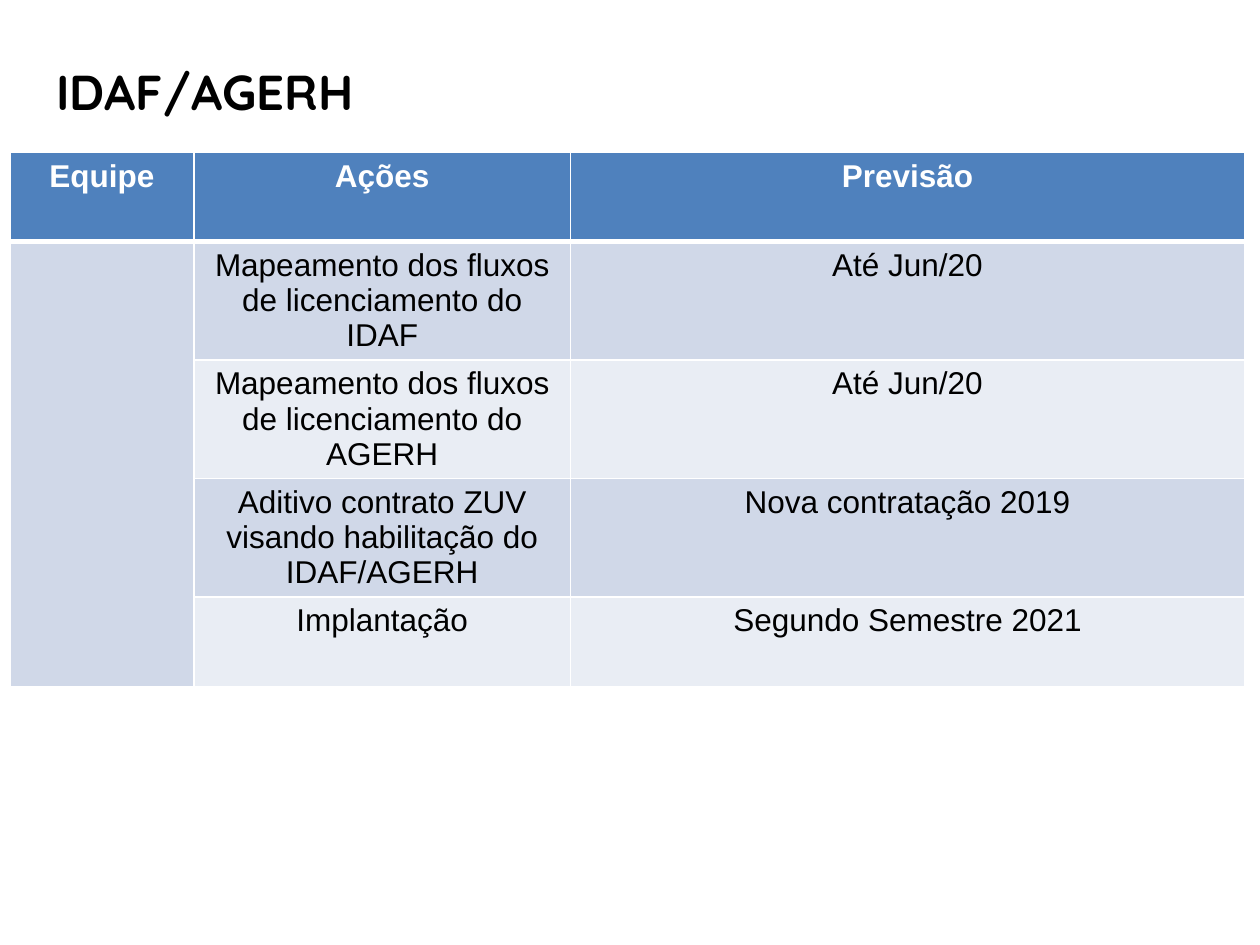
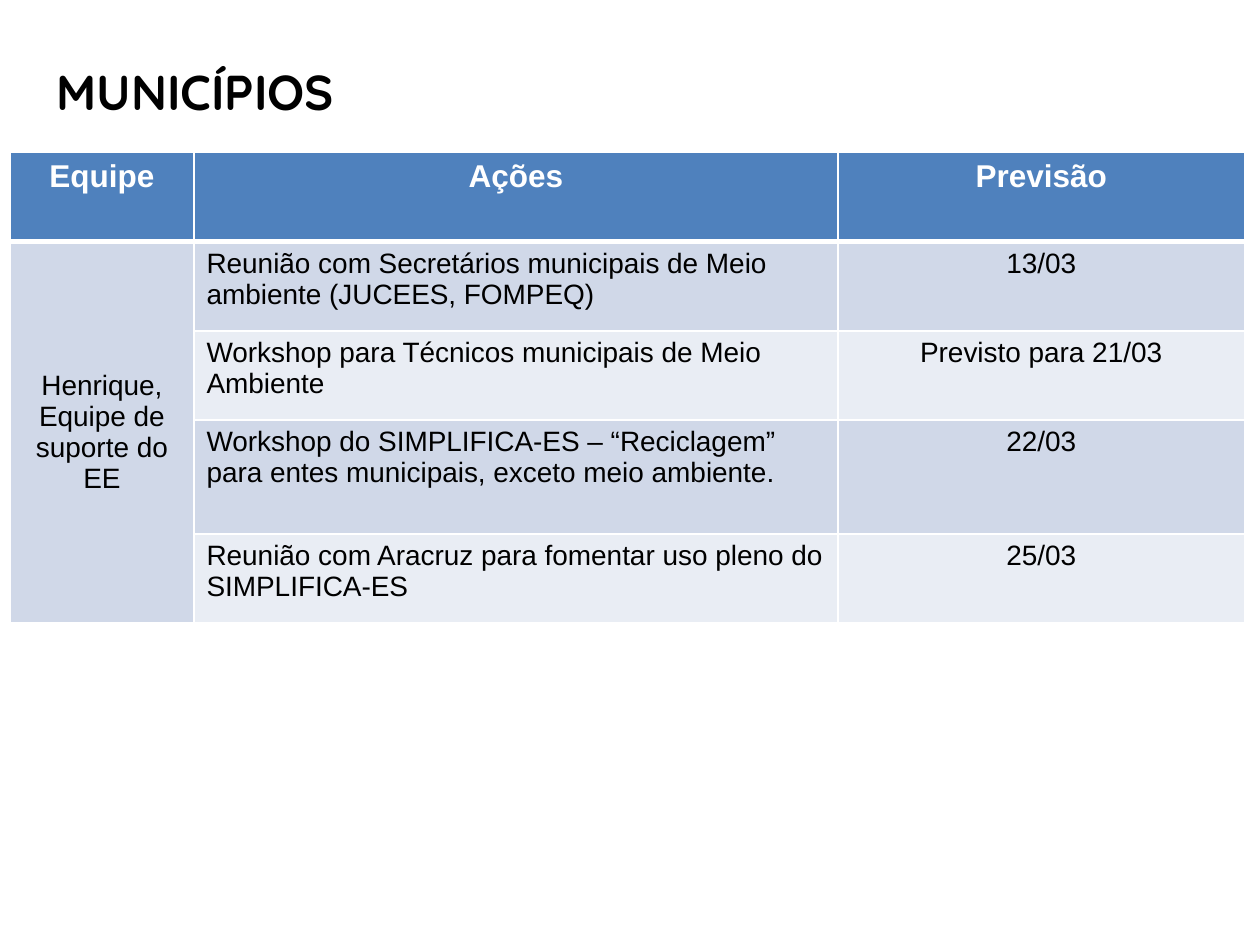
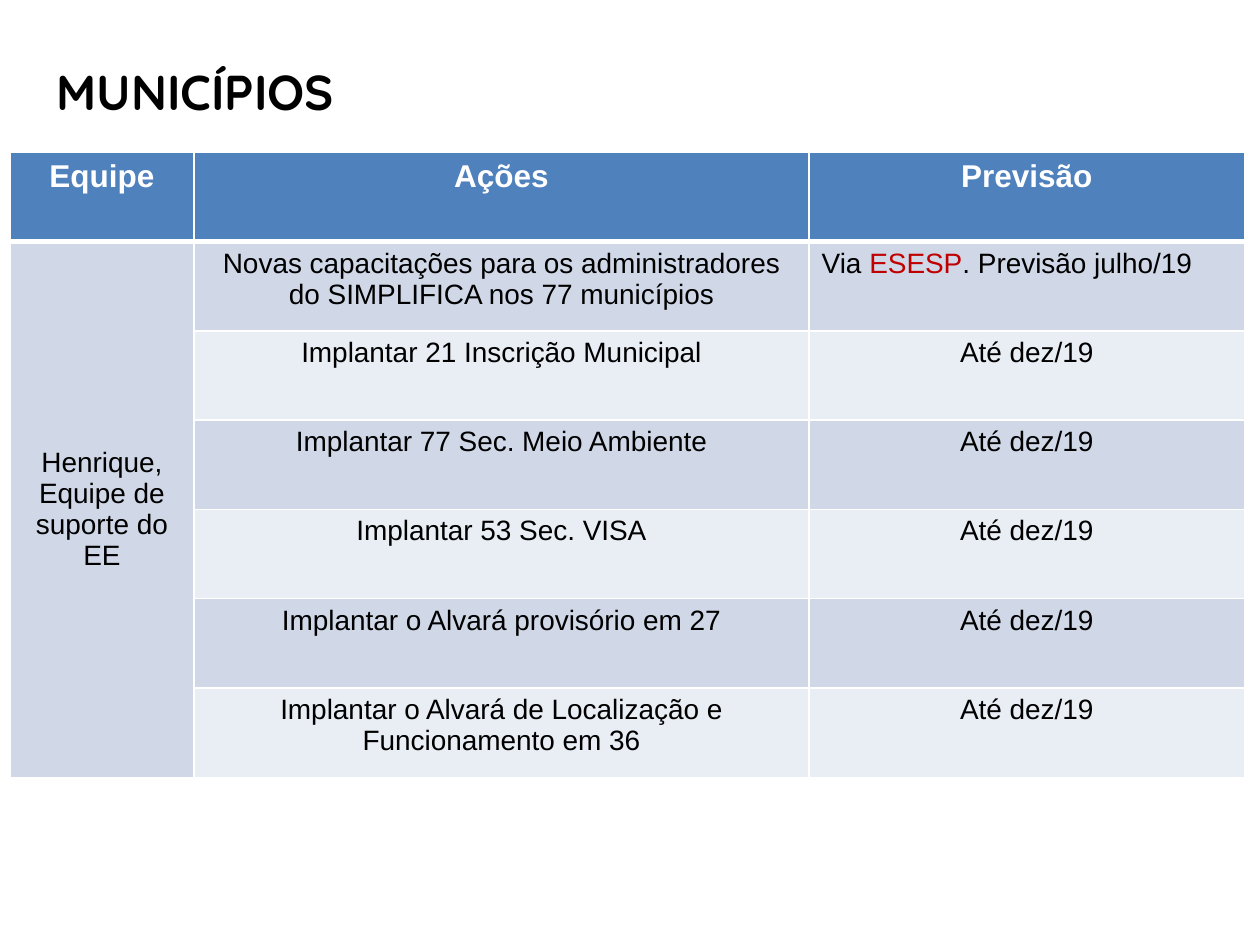
from dataclasses import dataclass

from lxml.etree import SubElement
from pptx import Presentation
from pptx.dml.color import RGBColor
from pptx.enum.text import MSO_ANCHOR as Anchor, PP_ALIGN as Align
from pptx.oxml.ns import qn
from pptx.util import Cm, Pt

# Shared look
BLACK, WHITE, RED = "000000", "FFFFFF", "C00000"
HEADER_BLUE = "4F81BD"
BANDS = ("D0D8E8", "E9EDF4")
HEADINGS = ("Equipe", "Ações", "Previsão")
TABLE_LEFT, TABLE_TOP, TABLE_WIDTH = 0.2, 3.07, 24.89
TEAM_WIDTH, ROW_HEIGHT, TALL_ROW_HEIGHT = 3.71, 1.8, 2.29
HEADING_SIZE = 18
THIN, THICK = 1, 3


@dataclass(frozen=True)
class Step:
    action: str
    forecast: str
    highlight: str = ""
    height: float = ROW_HEIGHT


@dataclass(frozen=True)
class Plan:
    title: str
    team: tuple[str, ...]
    steps: tuple[Step, ...]
    action_width: float
    size: int = 16
    action_align: Align = Align.CENTER


SUPPORT_TEAM = ("Henrique,", "Equipe de suporte do EE")

PLANS = (
    Plan("IDAF/AGERH", (), (
        Step("Mapeamento dos fluxos de licenciamento do IDAF", "Até Jun/20"),
        Step("Mapeamento dos fluxos de licenciamento do AGERH", "Até Jun/20"),
        Step("Aditivo contrato ZUV visando habilitação do IDAF/AGERH",
             "Nova contratação 2019"),
        Step("Implantação", "Segundo Semestre 2021"),
    ), action_width=7.59, size=18),
    Plan("MUNICÍPIOS", SUPPORT_TEAM, (
        Step("Reunião com Secretários municipais de Meio ambiente (JUCEES, FOMPEQ)",
             "13/03"),
        Step("Workshop para Técnicos municipais de Meio Ambiente",
             "Previsto para 21/03"),
        Step("Workshop do SIMPLIFICA-ES – “Reciclagem” para entes municipais, "
             "exceto meio ambiente.", "22/03", height=TALL_ROW_HEIGHT),
        Step("Reunião com Aracruz para fomentar uso pleno do SIMPLIFICA-ES", "25/03"),
    ), action_width=12.98, action_align=Align.LEFT),
    Plan("MUNICÍPIOS", SUPPORT_TEAM, (
        Step("Novas capacitações para os administradores do SIMPLIFICA "
             "nos 77 municípios", "Via ESESP. Previsão julho/19", highlight="ESESP"),
        Step("Implantar 21 Inscrição Municipal", "Até dez/19"),
        Step("Implantar 77 Sec. Meio Ambiente", "Até dez/19"),
        Step("Implantar 53 Sec. VISA", "Até dez/19"),
        Step("Implantar o Alvará provisório em 27", "Até dez/19"),
        Step("Implantar o Alvará de Localização e Funcionamento em 36", "Até dez/19"),
    ), action_width=12.4),
)


def rgb(color: str) -> RGBColor:
    return RGBColor.from_string(color)


def style(paragraph, size: int, color: str = BLACK, bold: bool = False,
          align: Align = Align.CENTER, font_name: str = "Arial") -> None:
    paragraph.alignment = align
    font = paragraph.font
    font.name, font.size, font.bold = font_name, Pt(size), bold
    font.color.rgb = rgb(color)


def paint(cell, fill: str, top: int = THIN, bottom: int = THIN) -> None:
    """White borders first, then the fill, as the cell schema orders them."""
    properties = cell._tc.get_or_add_tcPr()
    for side, width in (("L", THIN), ("R", THIN), ("T", top), ("B", bottom)):
        border = SubElement(properties, qn(f"a:ln{side}"), w=str(Pt(width)))
        solid = SubElement(border, qn("a:solidFill"))
        SubElement(solid, qn("a:srgbClr"), val=WHITE)
    cell.fill.solid()
    cell.fill.fore_color.rgb = rgb(fill)


def write(cell, text: str, size: int, **look) -> None:
    cell.text = text
    for paragraph in cell.text_frame.paragraphs:
        style(paragraph, size, **look)


def write_forecast(cell, step: Step, size: int) -> None:
    if not step.highlight:
        write(cell, step.forecast, size)
        return
    paragraph = cell.text_frame.paragraphs[0]
    style(paragraph, size, align=Align.LEFT)
    for part in step.forecast.partition(step.highlight):
        run = paragraph.add_run()
        run.text = part
        run.font.color.rgb = rgb(RED if part == step.highlight else BLACK)


def add_schedule(slide, plan: Plan) -> None:
    heights = [ROW_HEIGHT] + [step.height for step in plan.steps]
    schedule = slide.shapes.add_table(
        len(heights), len(HEADINGS), Cm(TABLE_LEFT), Cm(TABLE_TOP),
        Cm(TABLE_WIDTH), Cm(sum(heights))).table
    forecast_width = TABLE_WIDTH - TEAM_WIDTH - plan.action_width
    for column, width in zip(schedule.columns,
                             (TEAM_WIDTH, plan.action_width, forecast_width)):
        column.width = Cm(width)
    for row, height in zip(schedule.rows, heights):
        row.height = Cm(height)

    # Header row
    for column, heading in enumerate(HEADINGS):
        cell = schedule.cell(0, column)
        paint(cell, HEADER_BLUE, bottom=THICK)
        write(cell, heading, HEADING_SIZE, color=WHITE, bold=True)

    # Steps in alternating bands
    for index, step in enumerate(plan.steps):
        team, action, forecast = schedule.rows[index + 1].cells
        top = THICK if index == 0 else THIN
        paint(team, BANDS[0], top)
        for cell in (action, forecast):
            paint(cell, BANDS[index % 2], top)
        write(action, step.action, plan.size, align=plan.action_align)
        write_forecast(forecast, step, plan.size)

    # Team beside all steps
    team = schedule.cell(1, 0)
    team.merge(schedule.cell(len(plan.steps), 0))
    team.vertical_anchor = Anchor.MIDDLE
    write(team, "\n".join(plan.team), plan.size)


def add_title(slide, text: str) -> None:
    frame = slide.shapes.add_textbox(Cm(0.89), Cm(1.12), Cm(22), Cm(13.61)).text_frame
    frame.word_wrap = True
    frame.text = text
    style(frame.paragraphs[0], 28, bold=True, align=Align.JUSTIFY,
          font_name="Quicksand")


def main() -> None:
    deck = Presentation()
    deck.slide_width, deck.slide_height = Cm(25.4), Cm(19.05)
    for plan in PLANS:
        slide = deck.slides.add_slide(deck.slide_layouts[6])
        add_schedule(slide, plan)
        add_title(slide, plan.title)
    deck.save("out.pptx")


if __name__ == "__main__":
    main()
